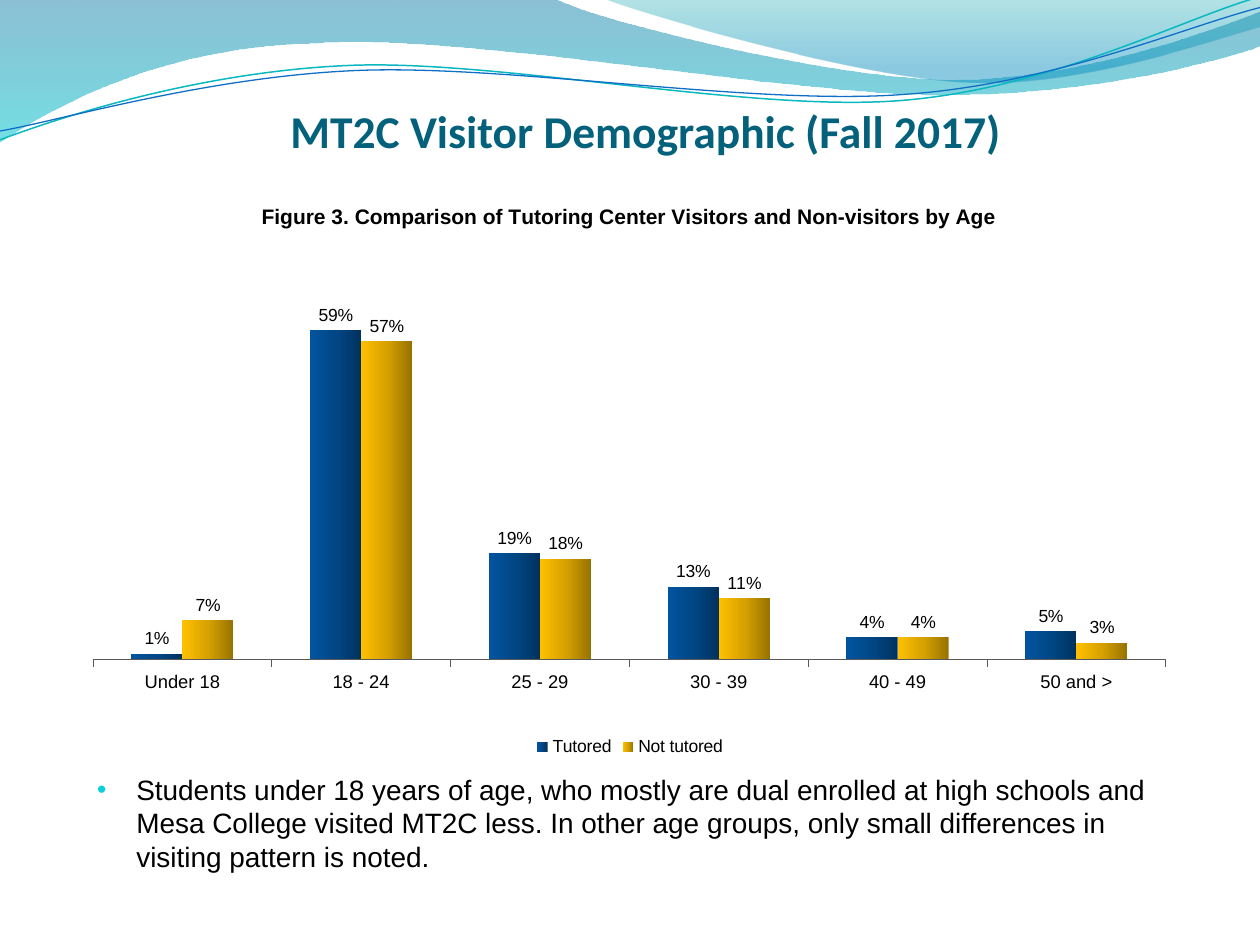
from lxml import etree
from pptx import Presentation
from pptx.chart.data import CategoryChartData
from pptx.dml.color import RGBColor
from pptx.enum.chart import (XL_CHART_TYPE, XL_LABEL_POSITION,
                             XL_LEGEND_POSITION, XL_TICK_MARK)
from pptx.enum.text import MSO_ANCHOR, PP_ALIGN
from pptx.oxml.ns import qn
from pptx.util import Cm, Pt

COLUMNS = XL_CHART_TYPE.COLUMN_CLUSTERED
OUTSIDE_END = XL_LABEL_POSITION.OUTSIDE_END
LEGEND_BOTTOM = XL_LEGEND_POSITION.BOTTOM
TICK_OUT, TICK_NONE = XL_TICK_MARK.OUTSIDE, XL_TICK_MARK.NONE
CENTER, LEFT = PP_ALIGN.CENTER, PP_ALIGN.LEFT
TOP, BOTTOM = MSO_ANCHOR.TOP, MSO_ANCHOR.BOTTOM

PAGE_WIDTH, PAGE_HEIGHT = 25.4, 19.05

# Wave outlines in tenths of the header width: a pair is a straight
# move, six numbers are a Bezier curve.
BACK_WAVE = [
    (0, 0), (4.4, -0.01), (4.76, 0.17, 6.64, 0.63, 7.58, 0.63),
    (8.53, 0.63, 9.58, 0.26, 10, 0.09), (10.01, 0.36),
    (9.83, 0.44, 8.7, 0.76, 7.46, 0.75), (6.22, 0.75, 3.82, 0.28, 2.57, 0.34),
    (1.29, 0.36, 0.46, 0.83, -0.01, 1.13)]
FRONT_WAVE = [
    (4.79, -0.01), (5.09, 0.11, 6.82, 0.62, 7.69, 0.65),
    (8.56, 0.69, 9.61, 0.32, 10, 0.21), (10, 0)]
TEAL_LINE = [
    (0, 1.11), (0.48, 0.93, 1.58, 0.57, 2.77, 0.52),
    (3.95, 0.47, 5.93, 0.89, 7.13, 0.8), (8.33, 0.71, 9.38, 0.15, 9.98, -0.02)]
BLUE_LINE = [
    (0, 1.04), (0.47, 0.96, 1.64, 0.61, 2.83, 0.56),
    (4.03, 0.51, 5.97, 0.84, 7.17, 0.75), (8.36, 0.67, 9.41, 0.21, 10, 0.06)]

# Gradient stops: position, colour, opacity (all in percent)
WAVES = [
    (BACK_WAVE, [(0, "0074A1", 45), (100, "00C6CF", 55)]),
    (FRONT_WAVE, [(0, "00A1A9", 30), (80, "008BBF", 45)])]
LINES = [(TEAL_LINE, "0AB8BF", 0.85), (BLUE_LINE, "0F6FC6", 0.75)]

AGE_GROUPS = ["Under 18", "18 - 24", "25 - 29", "30 - 39", "40 - 49", "50 and >"]
SERIES = [
    ("Tutored", [0.01, 0.59, 0.19, 0.13, 0.04, 0.05],
     [(0, "01325E", 100), (50, "014786", 100), (100, "01549F", 100)]),
    ("Not tutored", [0.07, 0.57, 0.18, 0.11, 0.04, 0.03],
     [(0, "977200", 100), (50, "D7A200", 100), (100, "FFC000", 100)])]


def color(hex_code):
    return RGBColor.from_string(hex_code)


def set_font(font, name, size, hex_code, bold=False):
    font.name, font.size, font.bold = name, Pt(size), bold
    font.color.rgb = color(hex_code)


def set_gradient(fill, properties, stops, angle):
    """Put a linear gradient, with opacity, in place of the fill."""
    fill.background()
    gradient = etree.Element(qn("a:gradFill"), rotWithShape="1")
    stop_list = etree.SubElement(gradient, qn("a:gsLst"))
    for position, hex_code, opacity in stops:
        stop = etree.SubElement(stop_list, qn("a:gs"), pos=str(position * 1000))
        shade = etree.SubElement(stop, qn("a:srgbClr"), val=hex_code)
        if opacity < 100:
            etree.SubElement(shade, qn("a:alpha"), val=str(opacity * 1000))
    etree.SubElement(gradient, qn("a:lin"), ang=str(angle * 60000), scaled="0")
    properties.replace(properties.find(qn("a:noFill")), gradient)


def set_layout(parent, index, targets, **percents):
    """Place a chart part by percentages of the chart area."""
    for old in parent.findall(qn("c:layout")):
        parent.remove(old)
    layout = etree.Element(qn("c:layout"))
    manual = etree.SubElement(layout, qn("c:manualLayout"))
    values = {name: value / 100 for name, value in percents.items()}
    for name, value in {**targets, "xMode": "edge", "yMode": "edge", **values}.items():
        etree.SubElement(manual, qn("c:" + name), val=str(value))
    parent.insert(index, layout)


def add_outline(page, left, top, width, outline, close):
    """Build the shape on its end points, then bend its segments."""
    unit = width / 10
    steps = [[(Cm(left + x * unit), Cm(top + y * unit))
              for x, y in zip(step[::2], step[1::2])] for step in outline]
    ends = [step[-1] for step in steps]
    builder = page.shapes.build_freeform(*ends[0])
    builder.add_line_segments(ends[1:], close=close)
    shape = builder.convert_to_shape()
    shape.shadow.inherit = False
    segments = list(shape._element.iter(qn("a:lnTo")))
    for segment, step in zip(segments, steps[1:]):
        if len(step) == 3:
            curve = etree.Element(qn("a:cubicBezTo"))
            for x, y in step:
                etree.SubElement(curve, qn("a:pt"),
                                 x=str(x - shape.left), y=str(y - shape.top))
            segment.getparent().replace(segment, curve)
    return shape


def add_header(page, left, top, width):
    for outline, stops in WAVES:
        wave = add_outline(page, left, top, width, outline, True)
        set_gradient(wave.fill, wave._element.spPr, stops, 90)
        wave.line.fill.background()
    for outline, hex_code, weight in LINES:
        line = add_outline(page, left, top, width, outline, False)
        line.fill.background()
        line.line.color.rgb = color(hex_code)
        line.line.width = Pt(weight)


def add_text(page, left, top, width, height, margins, anchor, align, text, font,
             bulleted=False):
    box = page.shapes.add_textbox(Cm(left), Cm(top), Cm(width), Cm(height))
    frame = box.text_frame
    frame.word_wrap = True
    frame.vertical_anchor = anchor
    (frame.margin_left, frame.margin_top,
     frame.margin_right, frame.margin_bottom) = [Cm(m) for m in margins]
    para = frame.paragraphs[0]
    para.alignment = align
    if bulleted:
        properties = para._p.get_or_add_pPr()
        properties.set("marL", str(Cm(0.79)))
        properties.set("indent", str(Cm(-0.79)))
        bullet_color = etree.SubElement(properties, qn("a:buClr"))
        etree.SubElement(bullet_color, qn("a:srgbClr"), val="0BD0D9")
        etree.SubElement(properties, qn("a:buSzPct"), val="95000")
        etree.SubElement(properties, qn("a:buFont"), typeface="Arial")
        etree.SubElement(properties, qn("a:buChar"), char="•")
    span = para.add_run()
    span.text = text
    set_font(span.font, *font)


def add_age_chart(page, left, top, width, height):
    data = CategoryChartData(number_format="0%")
    data.categories = AGE_GROUPS
    for name, values, _ in SERIES:
        data.add_series(name, values)
    chart = page.shapes.add_chart(
        COLUMNS, Cm(left), Cm(top), Cm(width), Cm(height), data).chart
    set_font(chart.font, "Arial", 10, "000000")

    # Title
    chart.has_title = True
    span = chart.chart_title.text_frame.paragraphs[0].add_run()
    span.text = "Figure 3. Comparison of Tutoring Center Visitors and Non-visitors by Age"
    set_font(span.font, "Arial", 12, "000000", True)
    chart.chart_title.include_in_layout = False
    set_layout(chart.chart_title._element, 1, {}, x=16.8, y=3)

    # Legend
    chart.has_legend = True
    chart.legend.position = LEGEND_BOTTOM
    chart.legend.include_in_layout = False

    # Axes
    ages, shares = chart.category_axis, chart.value_axis
    ages.major_tick_mark, ages.minor_tick_mark = TICK_OUT, TICK_NONE
    set_font(ages.tick_labels.font, "Arial", 10.5, "000000")
    ages.format.line.color.rgb = color("595959")
    ages.format.line.width = Pt(0.5)
    shares.visible = False
    shares.has_major_gridlines = False
    shares.minimum_scale, shares.maximum_scale = 0, 0.7

    # Columns and their labels
    plot = chart.plots[0]
    plot.gap_width, plot.overlap = 150, 0
    plot.vary_by_categories = False
    plot.has_data_labels = True
    labels = plot.data_labels
    labels.show_value = True
    labels.position = OUTSIDE_END
    labels.number_format, labels.number_format_is_linked = "0%", False
    set_font(labels.font, "Arial", 10, "000000")
    for series, (_, _, stops) in zip(plot.series, SERIES):
        fill = series.format.fill
        set_gradient(fill, series._element.find(qn("c:spPr")), stops, 180)
    plot_area = chart._chartSpace.find(qn("c:chart")).find(qn("c:plotArea"))
    set_layout(plot_area, 0, {"layoutTarget": "inner"}, x=2.1, y=14.9, w=95.7, h=67.4)


def main():
    deck = Presentation()
    deck.slide_width, deck.slide_height = Cm(PAGE_WIDTH), Cm(PAGE_HEIGHT)
    page = deck.slides.add_slide(deck.slide_layouts[6])
    add_header(page, 0, 0, PAGE_WIDTH)
    add_text(page, 1.91, 1.7, 22.23, 1.47, (0, 0.13, 0, 0), BOTTOM, CENTER,
             "MT2C Visitor Demographic (Fall 2017)", ("Calibri", 26, "04617B", True))
    add_text(page, 1.91, 15.44, 21.8, 1.9, (0.05, 0.13, 0.05, 0.13), TOP, LEFT,
             "Students under 18 years of age, who mostly are dual enrolled at high "
             "schools and Mesa College visited MT2C less. In other age groups, only "
             "small differences in visiting pattern is noted.",
             ("Arial", 16, "000000"), bulleted=True)
    add_age_chart(page, 1.4, 3.68, 22.6, 11.68)
    deck.save("out.pptx")


if __name__ == "__main__":
    main()
